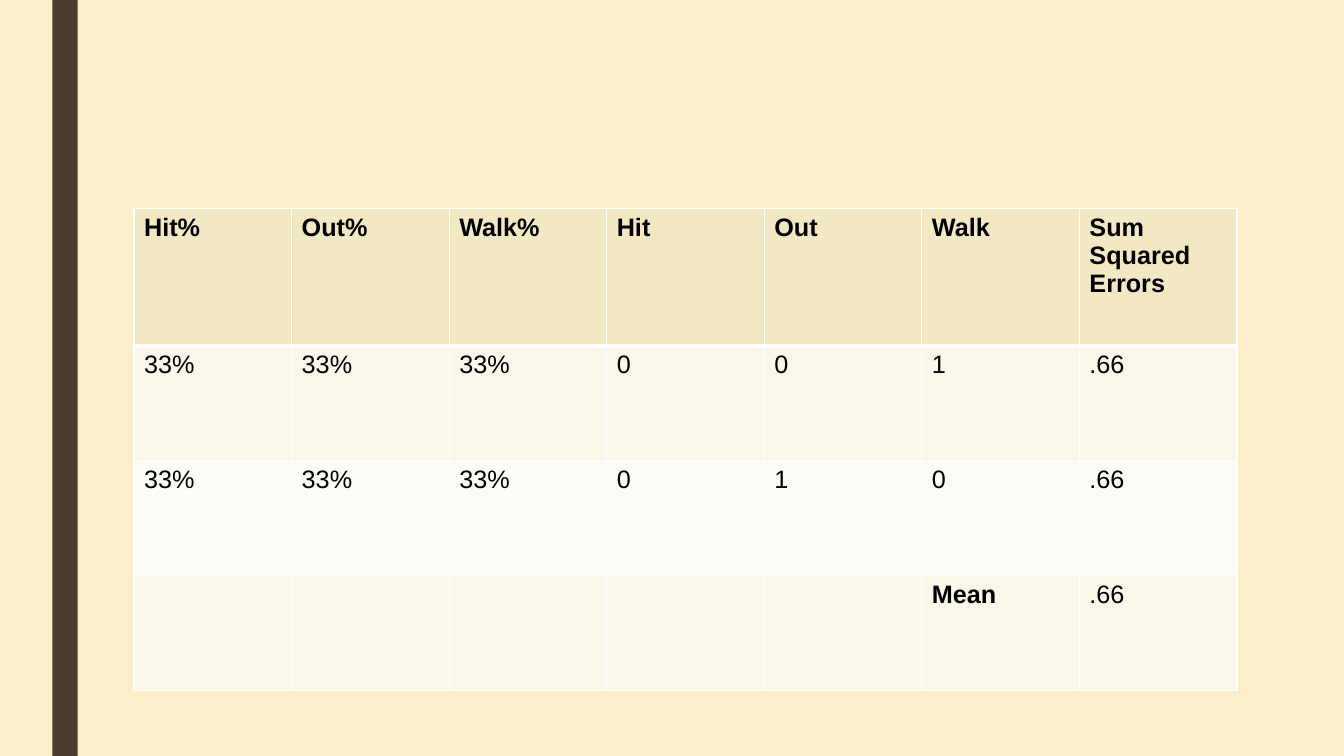
from dataclasses import dataclass

from lxml.etree import SubElement
from pptx import Presentation
from pptx.dml.color import RGBColor
from pptx.enum.shapes import MSO_SHAPE
from pptx.oxml.ns import qn
from pptx.util import Inches, Pt


@dataclass(frozen=True)
class Theme:
    """Colours, font and sizes of the slide."""
    background: str = "FBEEC9"
    stripe: str = "4E3B30"
    header: str = "F3E8C4"
    bands: tuple = ("FAF6EA", "FDFBF5")
    border: str = "FFFFFF"
    text: str = "000000"
    font: str = "Arial"
    size: int = 18
    thin: int = 1
    thick: int = 3


HEADER = ["Hit%", "Out%", "Walk%", "Hit", "Out", "Walk", "Sum Squared Errors"]
ROWS = [
    HEADER,
    ["33%", "33%", "33%", "0", "0", "1", ".66"],
    ["33%", "33%", "33%", "0", "1", "0", ".66"],
    ["", "", "", "", "", "Mean", ".66"],
]
BOLD_LABELS = {*HEADER, "Mean"}


def apply_format(target, values):
    """Set each attribute of the target from a dict."""
    for name, value in values.items():
        setattr(target, name, value)


def paint(fill, colour):
    """Give a fill one solid colour."""
    fill.solid()
    fill.fore_color.rgb = RGBColor.from_string(colour)


class SlideBuilder:
    """Draws elements on one slide in one theme."""

    def __init__(self, presentation, theme):
        """Add a blank slide with the theme's background."""
        self.theme = theme
        self.width = presentation.slide_width
        self.height = presentation.slide_height
        self.slide = presentation.slides.add_slide(presentation.slide_layouts[6])
        paint(self.slide.background.fill, theme.background)

    def box(self, left, top, width, height):
        """Turn shares of the slide's size into lengths."""
        return (round(left * self.width), round(top * self.height),
                round(width * self.width), round(height * self.height))

    def stripe(self, left, width):
        """Draw a full-height vertical stripe."""
        shape = self.slide.shapes.add_shape(MSO_SHAPE.RECTANGLE, *self.box(left, 0, width, 1))
        shape.shadow.inherit = False
        paint(shape.fill, self.theme.stripe)
        shape.line.fill.background()

    def table(self, rows, left, top, width, row_shares):
        """Draw a table with equal columns, a header row and banded body rows."""
        box = self.box(left, top, width, sum(row_shares))
        table = self.slide.shapes.add_table(len(rows), len(rows[0]), *box).table
        for column in table.columns:
            column.width = box[2] // len(rows[0])
        for row, share in zip(table.rows, row_shares):
            row.height = round(share * self.height)
        for row_index, labels in enumerate(rows):
            for column_index, label in enumerate(labels):
                self.cell(table.cell(row_index, column_index), label, row_index)

    def cell(self, cell, label, row_index):
        """Fill, border and label one table cell."""
        theme = self.theme
        bands = theme.bands
        self.borders(cell, row_index)
        paint(cell.fill, bands[(row_index - 1) % len(bands)] if row_index else theme.header)
        cell.text = label
        font = cell.text_frame.paragraphs[0].font
        apply_format(font, {"name": theme.font, "size": Pt(theme.size)})
        for run in cell.text_frame.paragraphs[0].runs:
            apply_format(run.font, {"name": theme.font, "size": Pt(theme.size),
                                    "bold": label in BOLD_LABELS})
            run.font.color.rgb = RGBColor.from_string(theme.text)

    def borders(self, cell, row_index):
        """Draw the cell's borders, with a thick rule below the header."""
        thick_side = {0: "lnB", 1: "lnT"}.get(row_index)
        properties = cell._tc.get_or_add_tcPr()
        for side in ("lnL", "lnR", "lnT", "lnB"):
            points = self.theme.thick if side == thick_side else self.theme.thin
            line = SubElement(properties, qn(f"a:{side}"), w=str(Pt(points)))
            fill = SubElement(line, qn("a:solidFill"))
            SubElement(fill, qn("a:srgbClr"), val=self.theme.border)


def main():
    """Build and save the presentation."""
    presentation = Presentation()
    apply_format(presentation, {"slide_width": Inches(13.33), "slide_height": Inches(7.5)})
    builder = SlideBuilder(presentation, Theme())
    builder.stripe(0.52 / 13.33, 0.25 / 13.33)
    builder.table(ROWS, 1.33 / 13.33, 2.07 / 7.5, 10.94 / 13.33,
                  [1.36 / 7.5] + [1.14 / 7.5] * 3)
    presentation.save("out.pptx")


if __name__ == "__main__":
    main()
